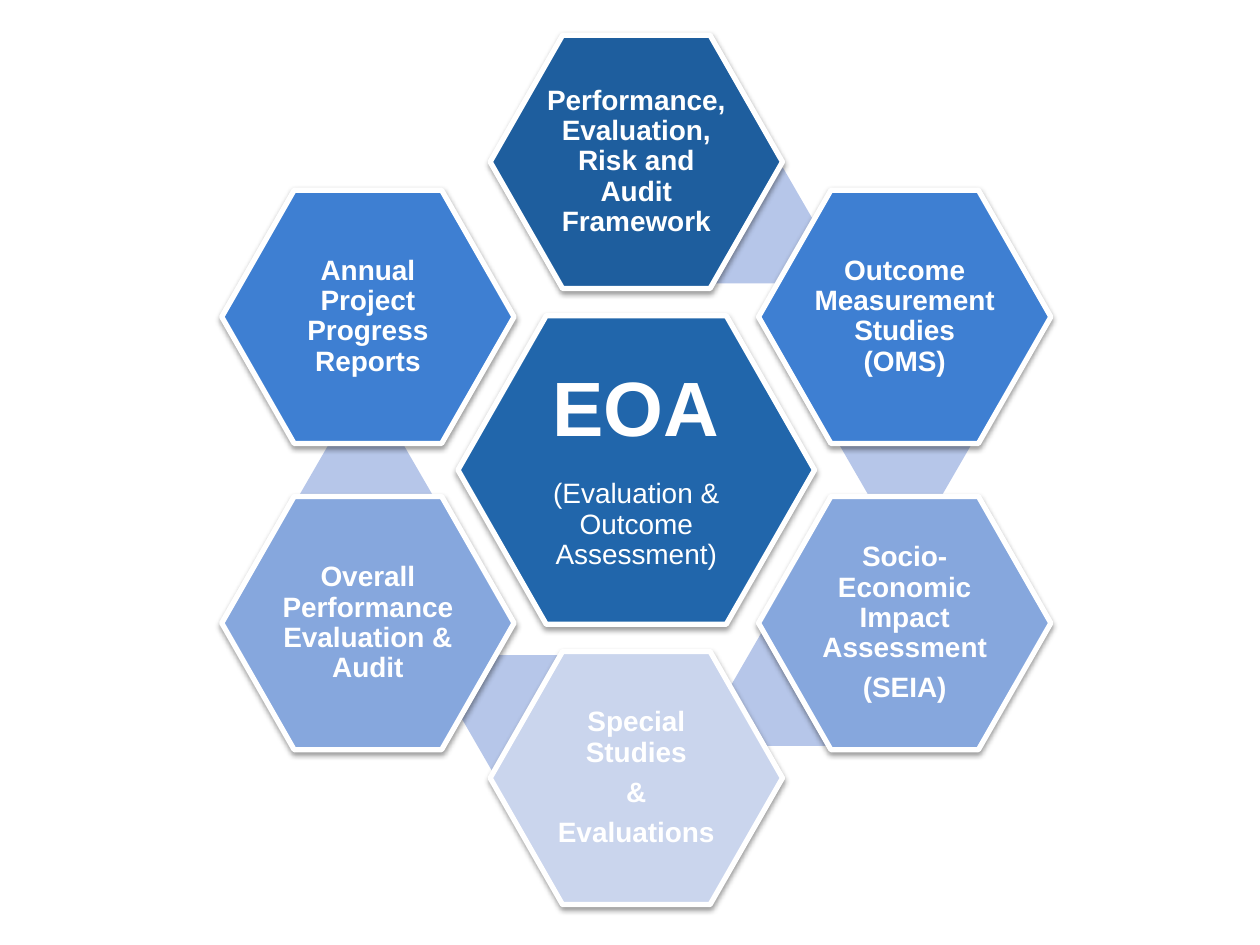
from dataclasses import dataclass

import lxml.etree
import pptx
import pptx.dml.color
import pptx.enum.shapes
import pptx.enum.text
import pptx.oxml
import pptx.oxml.ns
import pptx.util

Inches = pptx.util.Inches
Pt = pptx.util.Pt

COLORS = {
    "core": "2166AB",
    "framework": "1E5E9E",
    "upper": "3E7FD2",
    "lower": "86A7DD",
    "bottom": "CAD5ED",
    "accent": "B6C6E9",
    "white": "FFFFFF",
}

# Ring geometry in inches, measured from the middle of the core
CENTER_X, CENTER_Y = 5.05, 3.73
COLUMN_STEP = 2.13
OUTER_RISE, INNER_RISE = 2.445, 1.215
CORE_SIZE = (2.83, 2.45)
PETAL_SIZE = (2.32, 2.01)
ACCENT_SIZE = (1.07, 0.92)
PETAL_SLANT, ACCENT_SLANT = 0.286, 0.289
CORE_INSET, PETAL_INSET = 0.06, 0.02

SHADOW = (
    '<a:effectLst %s><a:outerShdw blurRad="40000" dist="20000" dir="5400000" rotWithShape="0">'
    '<a:srgbClr val="000000"><a:alpha val="38000"/></a:srgbClr></a:outerShdw></a:effectLst>'
    % pptx.oxml.ns.nsdecls("a")
)


@dataclass
class Line:
    text: str
    size: int = 16
    bold: bool = True


@dataclass
class Petal:
    column: int  # -1 left, 0 middle, 1 right
    rise: float  # offset of the middle below the core's middle
    fill: str
    lines: list[Line]
    accent: tuple[float, float] | None = None  # left, top of the accent behind it


PETALS = [
    Petal(0, -OUTER_RISE, "framework",
          [Line("Performance, Evaluation, Risk and Audit Framework")], (5.41, 1.33)),
    Petal(1, -INNER_RISE, "upper",
          [Line("Outcome Measurement Studies (OMS)")], (6.65, 3.05)),
    Petal(1, INNER_RISE, "lower",
          [Line("Socio- Economic Impact Assessment"), Line("(SEIA)")], (5.79, 5.0)),
    Petal(0, OUTER_RISE, "bottom",
          [Line("Special Studies"), Line("&"), Line("Evaluations")], (3.64, 5.2)),
    Petal(-1, INNER_RISE, "lower",
          [Line("Overall Performance Evaluation & Audit")], (2.37, 3.48)),
    Petal(-1, -INNER_RISE, "upper", [Line("Annual Project Progress Reports")]),
]


def rgb(name: str) -> pptx.dml.color.RGBColor:
    return pptx.dml.color.RGBColor.from_string(COLORS[name])


def apply(target, values: dict) -> None:
    for name, value in values.items():
        setattr(target, name, value)


def add_hexagon(page, left: float, top: float, size: tuple[float, float], fill: str, slant: float):
    """Add a plain hexagon without outline or shadow."""
    hexagon = page.shapes.add_shape(
        pptx.enum.shapes.MSO_SHAPE.HEXAGON,
        Inches(left), Inches(top), Inches(size[0]), Inches(size[1]))
    hexagon.adjustments[0] = slant
    hexagon.shadow.inherit = False
    hexagon.fill.solid()
    hexagon.fill.fore_color.rgb = rgb(fill)
    hexagon.line.fill.background()
    return hexagon


def write_lines(hexagon, lines: list[Line], inset: float) -> None:
    frame = hexagon.text_frame
    apply(frame, {
        "word_wrap": True,
        "vertical_anchor": pptx.enum.text.MSO_ANCHOR.MIDDLE,
        **{f"margin_{side}": Inches(inset) for side in ("left", "top", "right", "bottom")},
    })
    for index, line in enumerate(lines):
        para = frame.add_paragraph() if index else frame.paragraphs[0]
        apply(para, {
            "alignment": pptx.enum.text.PP_ALIGN.CENTER,
            "line_spacing": 0.9,
            "space_after": Pt(0.35 * line.size),
        })
        span = para.add_run()
        span.text = line.text
        apply(span.font, {"name": "Arial", "size": Pt(line.size), "bold": line.bold})
        span.font.color.rgb = rgb("white")


def add_card(page, center: tuple[float, float], size: tuple[float, float],
             fill: str, lines: list[Line], inset: float) -> None:
    """Add a hexagon with white outline, soft shadow and text."""
    left, top = center[0] - size[0] / 2, center[1] - size[1] / 2
    hexagon = add_hexagon(page, left, top, size, fill, PETAL_SLANT)
    hexagon.line.color.rgb = rgb("white")
    hexagon.line.width = Pt(3)
    effects = hexagon._element.spPr.find(pptx.oxml.ns.qn("a:effectLst"))
    hexagon._element.spPr.replace(effects, pptx.oxml.parse_xml(SHADOW))
    write_lines(hexagon, lines, inset)


def main() -> None:
    deck = pptx.Presentation()
    apply(deck, {"slide_width": Inches(10), "slide_height": Inches(7.5)})
    page = deck.slides.add_slide(deck.slide_layouts[6])

    # Core
    add_card(page, (CENTER_X, CENTER_Y), CORE_SIZE, "core",
             [Line("EOA", 44), Line("(Evaluation & Outcome Assessment)", bold=False)], CORE_INSET)

    # Ring of petals, each over its accent
    for petal in PETALS:
        if petal.accent:
            add_hexagon(page, *petal.accent, ACCENT_SIZE, "accent", ACCENT_SLANT)
        center = (CENTER_X + petal.column * COLUMN_STEP, CENTER_Y + petal.rise)
        add_card(page, center, PETAL_SIZE, petal.fill, petal.lines, PETAL_INSET)

    deck.save("out.pptx")


if __name__ == "__main__":
    main()
